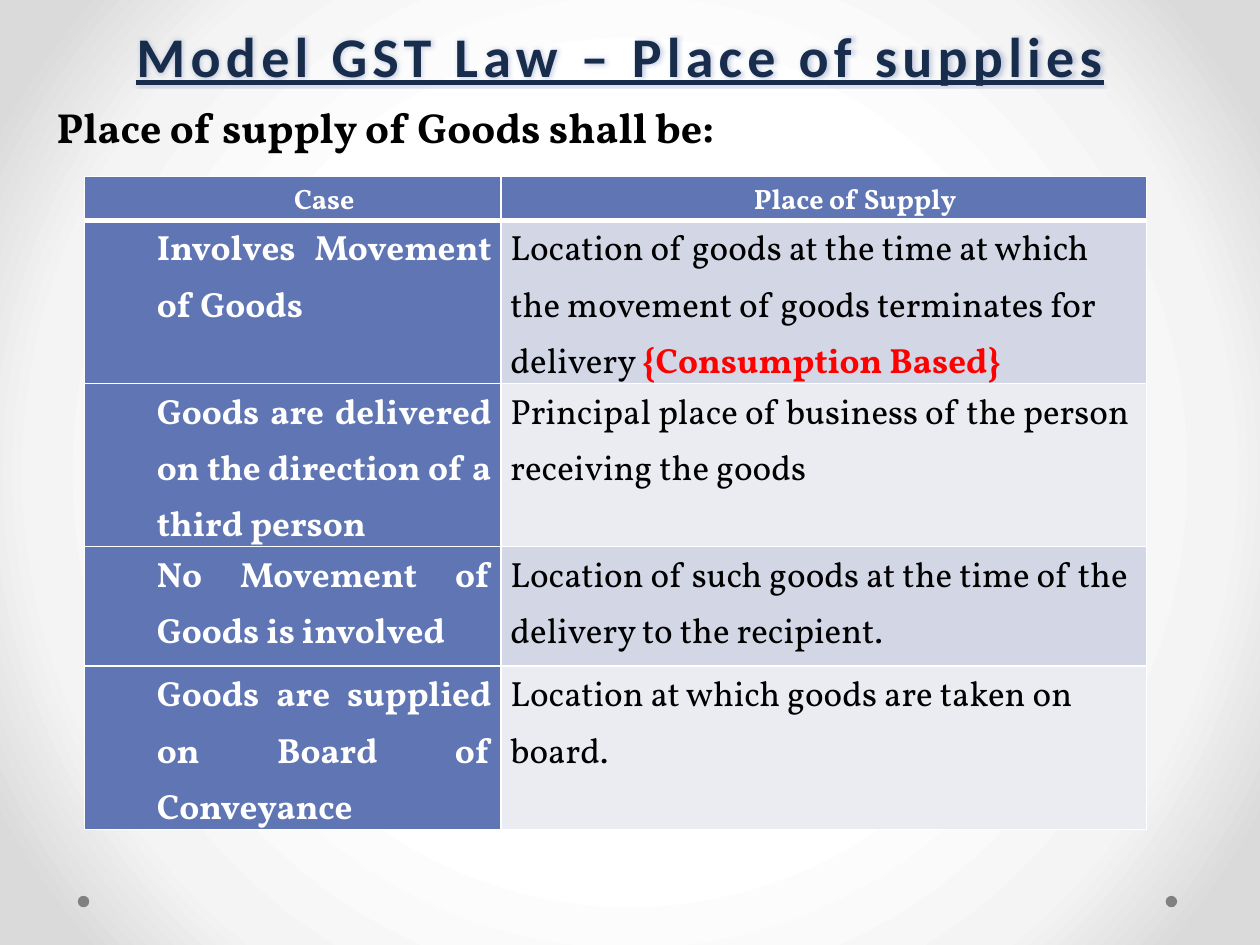
from lxml import etree
from pptx import Presentation
from pptx.dml.color import RGBColor
from pptx.enum.shapes import MSO_SHAPE as Shape
from pptx.enum.text import PP_ALIGN as Align
from pptx.oxml import parse_xml
from pptx.oxml.ns import nsdecls, qn
from pptx.util import Cm, Pt

COLORS = {
    "navy": "182C4B", "outline": "F5F6F9", "blue": "6076B4", "band": "D2D6E5",
    "light": "EAECF2", "white": "FFFFFF", "black": "000000", "red": "FF0000",
    "gray": "808080",
}
BACKGROUND_STOPS = [(50, "FFFFFF"), (76, "F4F4F4"), (92, "DADADA")]

TITLE = "Model GST Law – Place of supplies"
SUBTITLE = "Place of supply of Goods shall be:"
HEADERS = ["Case", "Place of Supply"]
# Each case with its place of supply and an optional highlight
CASES = [
    ("Involves Movement of Goods",
     "Location of goods at the time at which the movement of goods terminates for delivery ",
     "{Consumption Based}"),
    ("Goods are delivered on the direction of a third person",
     "Principal place of business of the person receiving the goods", ""),
    ("No Movement of Goods is involved",
     "Location of such goods at the time of the delivery to the recipient.", ""),
    ("Goods are supplied on Board of Conveyance",
     "Location at which goods are taken on board.", ""),
]
COLUMN_WIDTHS = [8.4, 13.01]
ROW_HEIGHTS = [0.88, 3.29, 3.29, 2.41, 3.29]


def color(name):
    return RGBColor.from_string(COLORS[name])


def add_run(paragraph, text, size, color_name, bold=True, font="Vollkorn"):
    run = paragraph.add_run()
    run.text = text
    run.font.name = font
    run.font.size = Pt(size)
    run.font.bold = bold
    run.font.color.rgb = color(color_name)
    return run


def add_text_box(slide, left, top, width, height):
    box = slide.shapes.add_textbox(Cm(left), Cm(top), Cm(width), Cm(height))
    box.text_frame.word_wrap = True
    return box.text_frame.paragraphs[0]


def set_background(slide):
    stops = "".join(
        f'<a:gs pos="{position * 1000}"><a:srgbClr val="{value}"/></a:gs>'
        for position, value in BACKGROUND_STOPS)
    background = parse_xml(
        f'<p:bg {nsdecls("p", "a")}><p:bgPr><a:gradFill><a:gsLst>{stops}</a:gsLst>'
        '<a:path path="circle"><a:fillToRect l="50000" t="50000" r="50000" b="50000"/>'
        '</a:path></a:gradFill><a:effectLst/></p:bgPr></p:bg>')
    slide.element.cSld.insert(0, background)


def style_title(run):
    run.font.underline = True
    properties = run.font._element
    properties.set("spc", "300")
    properties.insert(0, parse_xml(
        f'<a:ln {nsdecls("a")} w="{Pt(0.9)}"><a:solidFill>'
        f'<a:srgbClr val="{COLORS["outline"]}"/></a:solidFill></a:ln>'))
    properties.find(qn("a:solidFill")).addnext(parse_xml(
        f'<a:effectLst {nsdecls("a")}><a:glow rad="45500">'
        f'<a:srgbClr val="{COLORS["blue"]}"><a:alpha val="35000"/></a:srgbClr>'
        '</a:glow></a:effectLst>'))


def set_borders(cell, top=1, bottom=1):
    properties = cell._tc.get_or_add_tcPr()
    widths = [("L", 1), ("R", 1), ("T", top), ("B", bottom)]
    for index, (side, width) in enumerate(widths):
        line = etree.Element(qn(f"a:ln{side}"), w=str(Pt(width)))
        fill = etree.SubElement(line, qn("a:solidFill"))
        etree.SubElement(fill, qn("a:srgbClr"), val=COLORS["white"])
        properties.insert(index, line)


def format_cell(cell, fill, align, indent, top=1, bottom=1):
    cell.fill.solid()
    cell.fill.fore_color.rgb = color(fill)
    cell.margin_left = cell.margin_right = Cm(0.19)
    cell.margin_top = cell.margin_bottom = 0
    set_borders(cell, top, bottom)
    paragraph = cell.text_frame.paragraphs[0]
    paragraph.alignment = align
    paragraph.line_spacing = 1.15
    if indent:
        properties = paragraph._p.get_or_add_pPr()
        properties.set("marL", str(Cm(1.27)))
        properties.set("indent", "0")
    return paragraph


def add_supply_table(slide):
    frame = slide.shapes.add_table(
        len(ROW_HEIGHTS), len(COLUMN_WIDTHS), Cm(1.7), Cm(3.56),
        Cm(sum(COLUMN_WIDTHS)), Cm(sum(ROW_HEIGHTS)))
    table = frame.table
    for column, width in zip(table.columns, COLUMN_WIDTHS):
        column.width = Cm(width)
    for row, height in zip(table.rows, ROW_HEIGHTS):
        row.height = Cm(height)

    for index, header in enumerate(HEADERS):
        paragraph = format_cell(table.cell(0, index), "blue", Align.CENTER, True, bottom=3)
        add_run(paragraph, header, 16, "white")

    for index, (case, place, highlight) in enumerate(CASES, start=1):
        top = 3 if index == 1 else 1
        paragraph = format_cell(table.cell(index, 0), "blue", Align.JUSTIFY, True, top)
        add_run(paragraph, case, 20, "white")
        band = "band" if index % 2 else "light"
        paragraph = format_cell(table.cell(index, 1), band, Align.LEFT, False, top)
        add_run(paragraph, place, 20, "black", bold=False)
        if highlight:
            add_run(paragraph, highlight, 20, "red")


def main():
    presentation = Presentation()
    presentation.slide_width, presentation.slide_height = Cm(25.4), Cm(19.05)
    slide = presentation.slides.add_slide(presentation.slide_layouts[6])
    set_background(slide)

    # Corner dots
    for left in (23.5, 1.57):
        dot = slide.shapes.add_shape(Shape.OVAL, Cm(left), Cm(18.06), Cm(0.23), Cm(0.23))
        dot.shadow.inherit = False
        dot.fill.solid()
        dot.fill.fore_color.rgb = color("gray")
        dot.line.fill.background()

    # Title and subtitle
    paragraph = add_text_box(slide, 1.3, 0.3, 22.4, 1.63)
    paragraph.alignment = Align.CENTER
    style_title(add_run(paragraph, TITLE, 32, "navy", font="Calibri"))
    paragraph = add_text_box(slide, 0.89, 1.93, 24.2, 4.11)
    add_run(paragraph, SUBTITLE, 24, "black")

    add_supply_table(slide)
    presentation.save("out.pptx")


if __name__ == "__main__":
    main()
